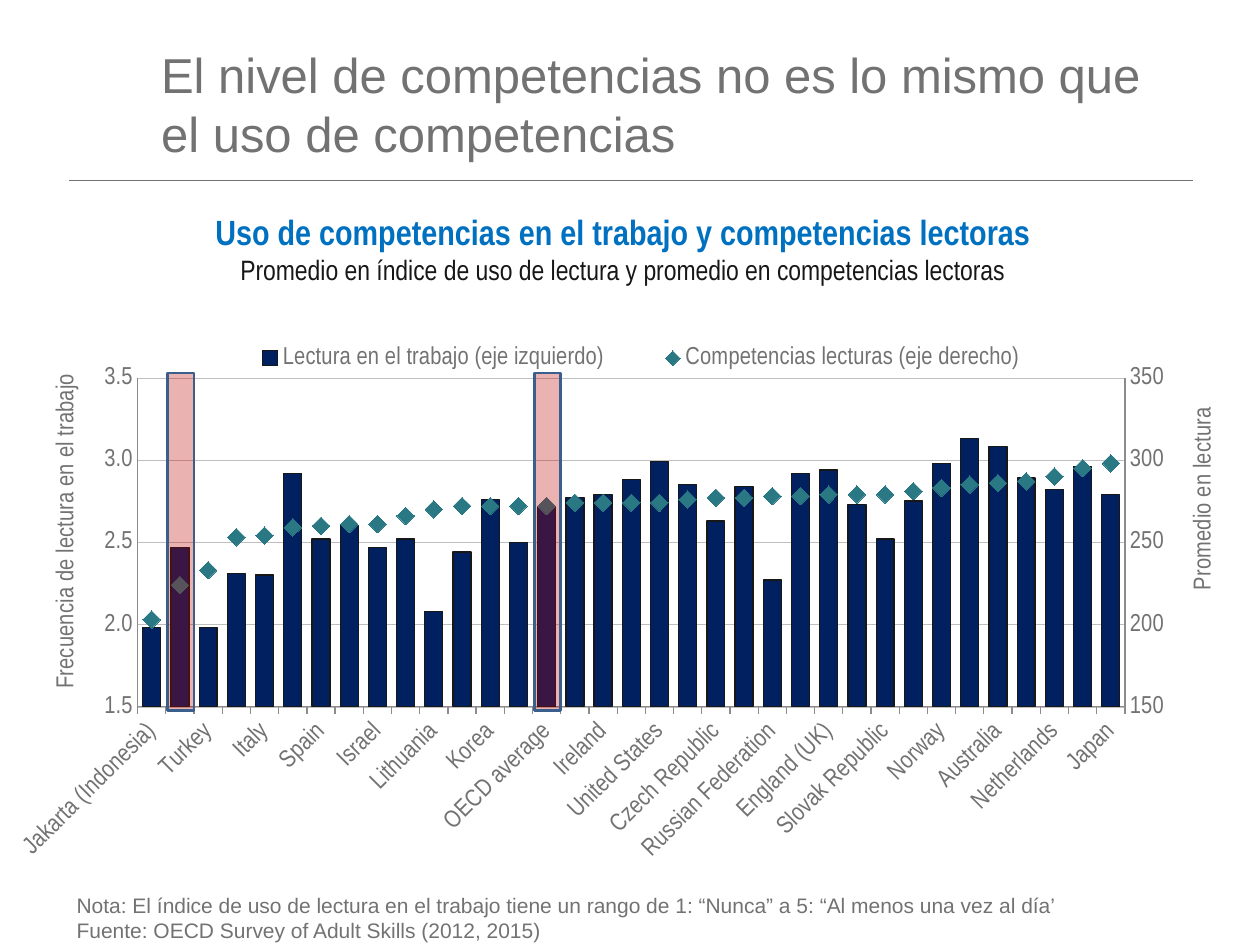
"""Build the slide that compares skill use at work with reading proficiency."""
from copy import deepcopy
from dataclasses import dataclass

from lxml import etree
from pptx import Presentation
from pptx.chart.data import CategoryChartData
from pptx.dml.color import RGBColor
from pptx.enum.chart import (XL_CHART_TYPE, XL_LEGEND_POSITION, XL_MARKER_STYLE,
                             XL_TICK_LABEL_POSITION, XL_TICK_MARK)
from pptx.enum.shapes import MSO_CONNECTOR, MSO_SHAPE
from pptx.enum.text import MSO_ANCHOR, PP_ALIGN
from pptx.oxml import parse_xml
from pptx.oxml.ns import nsdecls, qn
from pptx.util import Pt

COLUMNS = XL_CHART_TYPE.COLUMN_CLUSTERED
LEGEND_TOP = XL_LEGEND_POSITION.TOP
DIAMOND = XL_MARKER_STYLE.DIAMOND
LABELS_LOW = XL_TICK_LABEL_POSITION.LOW
NO_TICKS = XL_TICK_MARK.NONE
TICKS_OUT = XL_TICK_MARK.OUTSIDE
STRAIGHT = MSO_CONNECTOR.STRAIGHT
RECTANGLE = MSO_SHAPE.RECTANGLE
MIDDLE, TOP = MSO_ANCHOR.MIDDLE, MSO_ANCHOR.TOP
LEFT, CENTER = PP_ALIGN.LEFT, PP_ALIGN.CENTER


@dataclass(frozen=True)
class Theme:
    grey: str = "727272"
    black: str = "171717"
    blue: str = "0070C0"
    navy: str = "002060"
    teal: str = "2A7883"
    grid: str = "BFBFBF"
    axis: str = "8C8C8C"
    highlight: str = "C00000"
    outline: str = "3A5F8C"
    sans: str = "Arial"
    narrow: str = "Arial Narrow"
    title: int = 28
    heading: int = 20
    subheading: int = 16
    chart: int = 14
    note: int = 12


@dataclass(frozen=True)
class Box:
    left: float
    top: float
    width: float
    height: float

    def points(self) -> tuple:
        return Pt(self.left), Pt(self.top), Pt(self.width), Pt(self.height)


@dataclass(frozen=True)
class Line:
    text: str
    size: int
    color: str
    font: str
    bold: bool = False


@dataclass(frozen=True)
class Country:
    name: str
    reading_use: float
    proficiency: int


THEME = Theme()
NAMES = (
    "Jakarta (Indonesia)", "Chile", "Turkey", "Greece", "Italy", "Singapore", "Spain",
    "Slovenia", "Israel", "France", "Lithuania", "Poland", "Korea", "Cyprus¹",
    "OECD average", "Austria", "Ireland", "Germany", "United States",
    "Northern Ireland (UK)", "Czech Republic", "Denmark", "Russian Federation", "Canada",
    "England (UK)", "Estonia", "Slovak Republic", "Flanders (Belgium)", "Norway",
    "New Zealand", "Australia", "Sweden", "Netherlands", "Finland", "Japan")
READING_USE = (
    1.98, 2.47, 1.98, 2.31, 2.3, 2.92, 2.52, 2.6, 2.47, 2.52, 2.08, 2.44, 2.76, 2.5, 2.71,
    2.77, 2.79, 2.88, 2.99, 2.85, 2.63, 2.84, 2.27, 2.92, 2.94, 2.73, 2.52, 2.75, 2.98,
    3.13, 3.08, 2.89, 2.82, 2.96, 2.79)
PROFICIENCY = (
    203, 224, 233, 253, 254, 259, 260, 261, 261, 266, 270, 272, 272, 272, 272, 274, 274,
    274, 274, 276, 277, 277, 278, 278, 279, 279, 279, 281, 283, 285, 286, 287, 290, 295, 298)
COUNTRIES = [Country(*row) for row in zip(NAMES, READING_USE, PROFICIENCY)]
HIGHLIGHTS = [Box(left, 213.1, 15.1, 193) for left in (95.8, 305.3)]


def rgb(color: str) -> RGBColor:
    return RGBColor.from_string(color)


def style_font(font, size: int, color: str, name: str, bold: bool = False) -> None:
    font.size, font.name, font.bold = Pt(size), name, bold
    font.color.rgb = rgb(color)


def style_line(line, color: str, width: float) -> None:
    line.color.rgb = rgb(color)
    line.width = Pt(width)


def add_text(slide, box: Box, lines: list[Line], alignment=LEFT, anchor=TOP) -> None:
    text_frame = slide.shapes.add_textbox(*box.points()).text_frame
    text_frame.word_wrap = True
    text_frame.vertical_anchor = anchor
    text_frame.text = "\n".join(line.text for line in lines)
    for paragraph, line in zip(text_frame.paragraphs, lines):
        paragraph.alignment = alignment
        style_font(paragraph.runs[0].font, line.size, line.color, line.font, line.bold)


def add_rule(slide) -> None:
    rule = slide.shapes.add_connector(STRAIGHT, Pt(39.6), Pt(103), Pt(681.8), Pt(103))
    style_line(rule.line, THEME.grey, 0.5)
    etree.SubElement(rule._element.spPr, qn("a:effectLst"))


def add_highlight(slide, box: Box) -> None:
    shape = slide.shapes.add_shape(RECTANGLE, *box.points())
    shape.shadow.inherit = False
    shape.fill.solid()
    shape.fill.fore_color.rgb = rgb(THEME.highlight)
    color = shape._element.spPr.find(qn("a:solidFill"))[0]
    etree.SubElement(color, qn("a:alpha")).set("val", "30000")
    style_line(shape.line, THEME.outline, 1.5)


def set_layout(parent, index: int, inner: bool = False, **fractions: float) -> None:
    for layout in parent.findall(qn("c:layout")):
        parent.remove(layout)
    values = {"layoutTarget": "inner"} if inner else {}
    values.update({f"{key}Mode": "edge" for key in ("x", "y")}, **fractions)
    items = "".join(f'<c:{key} val="{value}"/>' for key, value in values.items())
    parent.insert(index, parse_xml(
        f'<c:layout {nsdecls("c")}><c:manualLayout>{items}</c:manualLayout></c:layout>'))


def set_value(parent, tag: str, value) -> None:
    parent.find(".//" + qn(tag)).set("val", str(value))


def style_axes(chart) -> None:
    category, value = chart.category_axis, chart.value_axis
    for axis in (category, value):
        style_font(axis.tick_labels.font, THEME.chart, THEME.grey, THEME.narrow)
        style_line(axis.format.line, THEME.axis, 0.75)
    category.tick_label_position = LABELS_LOW
    category.major_tick_mark = TICKS_OUT
    category._element.find(qn("c:txPr")).find(qn("a:bodyPr")).set("rot", "-2700000")
    skip = parse_xml(f'<c:tickLblSkip {nsdecls("c")} val="2"/>')
    category._element.find(qn("c:noMultiLvlLbl")).addprevious(skip)
    value.minimum_scale, value.maximum_scale, value.major_unit = 1.5, 3.5, 0.5
    value.major_tick_mark = NO_TICKS
    value.tick_labels.number_format = "#,##0.0"
    value.tick_labels.number_format_is_linked = False
    style_line(value.major_gridlines.format.line, THEME.grid, 0.25)
    text_frame = value.axis_title.text_frame
    text_frame.text = "Frecuencia de lectura en el trabajo"
    style_font(text_frame.paragraphs[0].runs[0].font, THEME.chart, THEME.grey, THEME.narrow)
    title = value._element.find(qn("c:title"))
    title.find(".//" + qn("a:bodyPr")).set("rot", "-5400000")
    set_layout(title, 1, x=0.03, y=0.1)


def move_to_right_axis(chart) -> None:
    plot_area = chart._chartSpace.chart.plotArea
    left, bottom = chart.value_axis._element, chart.category_axis._element
    series = chart.plots[0].series[1]._element
    for flag in series.findall(qn("c:invertIfNegative")):
        series.remove(flag)
    line_chart = parse_xml(
        f'<c:lineChart {nsdecls("c")}><c:grouping val="standard"/><c:varyColors val="0"/>'
        '<c:marker val="1"/><c:axId val="5001"/><c:axId val="5002"/></c:lineChart>')
    line_chart.insert(2, series)
    plot_area.find(qn("c:barChart")).addnext(line_chart)
    right, hidden = deepcopy(left), deepcopy(bottom)
    for axis, own, other in ((right, 5002, 5001), (hidden, 5001, 5002)):
        set_value(axis, "c:axId", own)
        set_value(axis, "c:crossAx", other)
    set_value(hidden, "c:delete", 1)
    right.remove(right.find(qn("c:majorGridlines")))
    for tag, value in (("c:axPos", "r"), ("c:crosses", "max"), ("c:min", 150),
                       ("c:max", 350), ("c:majorUnit", 50)):
        set_value(right, tag, value)
    right.find(qn("c:numFmt")).set("formatCode", "0")
    right.find(".//" + qn("a:t")).text = "Promedio en lectura"
    set_layout(right.find(qn("c:title")), 1, x=0.94, y=0.16)
    left.addnext(right)
    right.addnext(hidden)


def add_skills_chart(slide, box: Box) -> None:
    data = CategoryChartData()
    data.categories = [country.name for country in COUNTRIES]
    data.add_series("Lectura en el trabajo (eje izquierdo)",
                    [country.reading_use for country in COUNTRIES])
    data.add_series("Competencias lecturas (eje derecho)",
                    [country.proficiency for country in COUNTRIES])
    chart = slide.shapes.add_chart(COLUMNS, *box.points(), data).chart
    style_font(chart.font, THEME.chart, THEME.grey, THEME.narrow)
    chart.has_title = False
    chart.has_legend = True
    chart.legend.position = LEGEND_TOP
    chart.legend.include_in_layout = False
    style_font(chart.legend.font, THEME.chart, THEME.grey, THEME.narrow)
    set_layout(chart.legend._element, 1, x=0.16, y=0.05, w=0.69, h=0.06)
    style_axes(chart)
    move_to_right_axis(chart)
    set_layout(chart._chartSpace.chart.plotArea, 0, inner=True, x=0.1, y=0.12, w=0.79, h=0.59)
    set_layout(chart._chartSpace.chart.plotArea, 0, inner=True,
               x=0.102, y=0.115, w=0.79, h=0.591)
    columns, markers = chart.plots
    columns.gap_width = 57
    columns.vary_by_categories = False
    bars, points = columns.series[0], markers.series[0]
    bars.format.fill.solid()
    bars.format.fill.fore_color.rgb = rgb(THEME.navy)
    style_line(bars.format.line, THEME.black, 0.75)
    points.smooth = False
    points.format.line.fill.background()
    points.marker.style, points.marker.size = DIAMOND, 10
    points.marker.format.fill.solid()
    points.marker.format.fill.fore_color.rgb = rgb(THEME.teal)
    points.marker.format.line.fill.background()


def main() -> None:
    presentation = Presentation()
    presentation.slide_width, presentation.slide_height = Pt(720), Pt(540)
    slide = presentation.slides.add_slide(presentation.slide_layouts[6])
    add_rule(slide)
    add_text(slide, Box(85, 18.7, 584, 80.6), [
        Line("El nivel de competencias no es lo mismo que el uso de competencias",
             THEME.title, THEME.grey, THEME.sans)], anchor=MIDDLE)
    add_skills_chart(slide, Box(5.8, 179.3, 714.2, 318.2))
    add_text(slide, Box(36.7, 506.2, 576, 36), [
        Line(text, THEME.note, THEME.grey, THEME.sans) for text in (
            "Nota: El índice de uso de lectura en el trabajo tiene un rango de 1: "
            "“Nunca” a 5: “Al menos una vez al día’",
            "Fuente: OECD Survey of Adult Skills (2012, 2015)")])
    add_text(slide, Box(106, 116.6, 500, 56.9), [
        Line("Uso de competencias en el trabajo y competencias lectoras",
             THEME.heading, THEME.blue, THEME.narrow, bold=True),
        Line("Promedio en índice de uso de lectura y promedio en competencias lectoras",
             THEME.subheading, THEME.black, THEME.narrow)], alignment=CENTER)
    for box in HIGHLIGHTS:
        add_highlight(slide, box)
    presentation.save("out.pptx")


if __name__ == "__main__":
    main()
